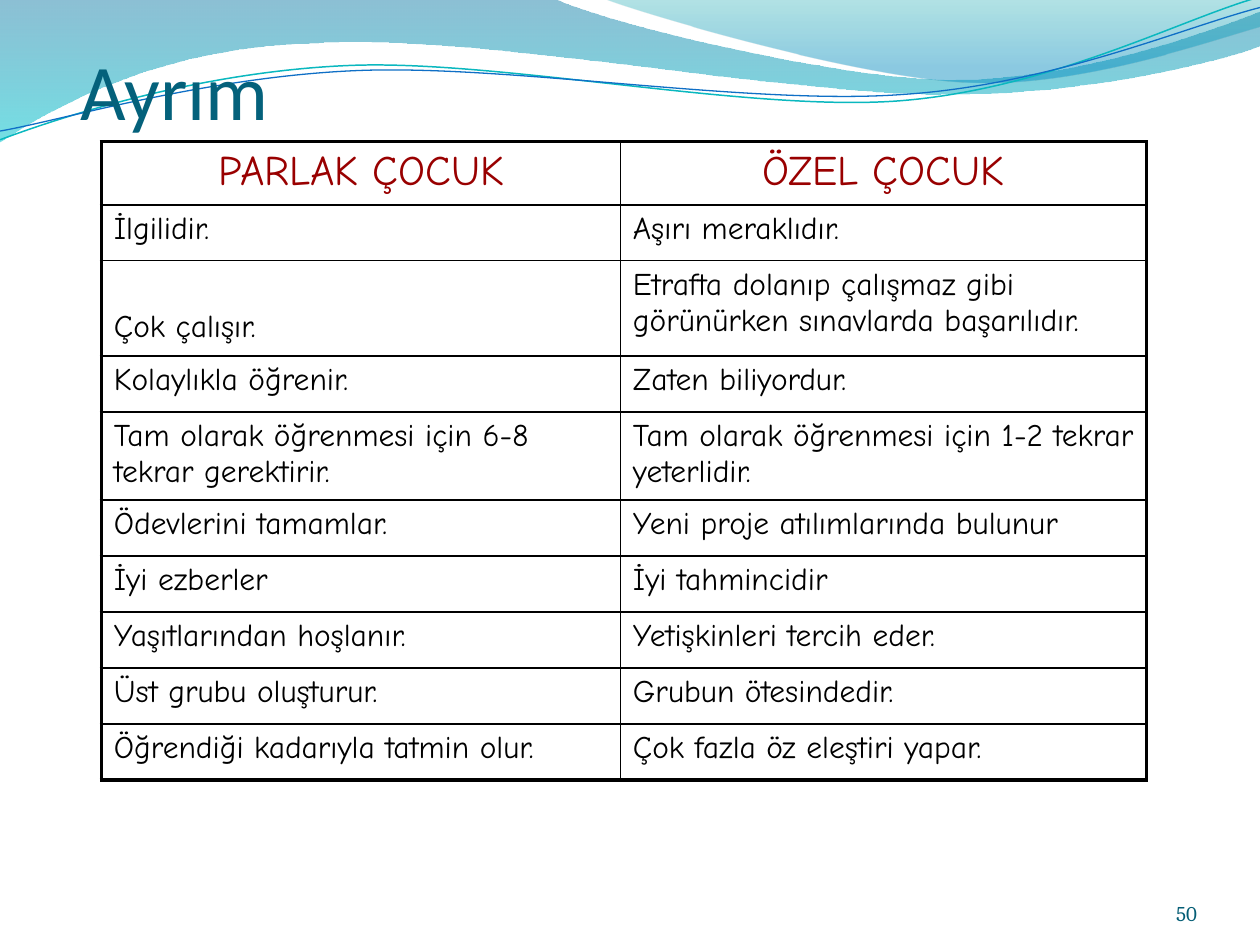
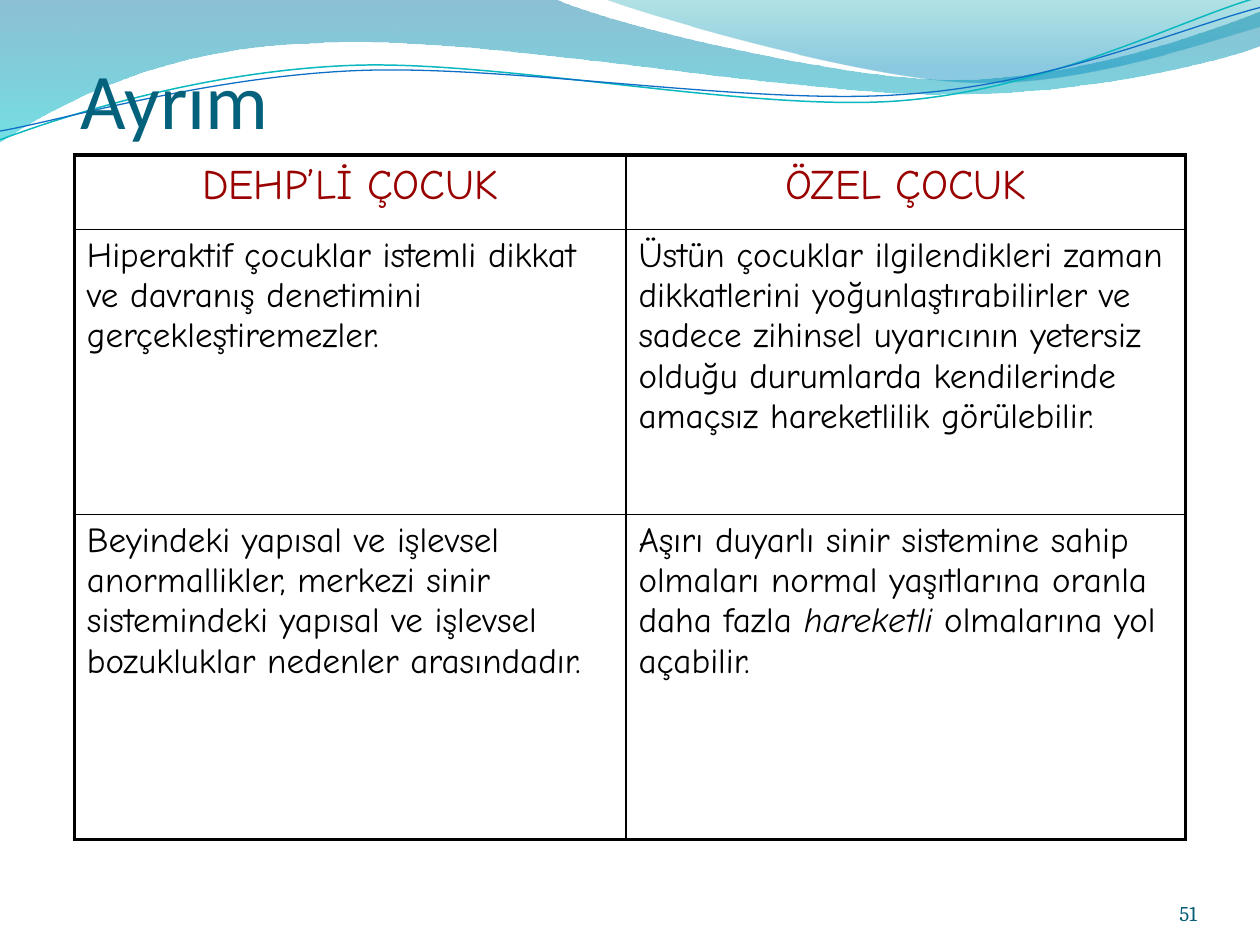
import pptx
import pptx.dml.color
import pptx.enum.text
import pptx.oxml.ns
import pptx.util
from lxml import etree

Pt = pptx.util.Pt
ALIGN = pptx.enum.text.PP_ALIGN
ANCHOR = pptx.enum.text.MSO_ANCHOR
qn = pptx.oxml.ns.qn

# Shared colours and sizes
TITLE_TEAL, NUMBER_TEAL = "04617B", "045D75"
HEADER_RED, BLACK = "990000", "000000"
THICK, THIN = 2.25, 1
WAVE_TILT = -2.7

# Top waves: a start point, then corners (x, y) or curves (two controls, end)
waves = [
    dict(start=(0, 0),
         segments=[(316.8, -0.7), (342.7, 12.2, 478.1, 45.4, 545.8, 45.4),
                   (614.2, 45.4, 689.8, 18.7, 720, 6.5), (720.7, 25.9),
                   (707.8, 31.7, 626.4, 54.7, 537.1, 54),
                   (447.8, 54, 275, 20.2, 185, 24.5),
                   (92.9, 25.9, 33.1, 59.8, -0.7, 81.4)],
         stops=[(0, "0074A1", 45), (1, "00C6CF", 55)]),
    dict(start=(344.9, -0.7),
         segments=[(366.5, 7.9, 491, 44.6, 553.7, 46.8),
                   (616.3, 49.7, 691.9, 23, 720, 15.1), (720, 0)],
         stops=[(0, "00A1A9", 30), (0.8, "008BBF", 45)]),
    dict(start=(-1.4, 62.9),
         segments=[(33.7, 51.6, 114, 29.4, 199.8, 29.9),
                   (284.8, 30.3, 425.8, 67.2, 512.4, 64.9),
                   (599, 62.4, 676.4, 25.7, 720.2, 15.6)],
         line=("0AB8BF", 0.85)),
    dict(start=(-1.2, 57.9),
         segments=[(33, 53.7, 118.3, 32.5, 204, 33),
                   (290.5, 33.4, 428.9, 63.8, 515.5, 61.3),
                   (601.4, 59.7, 678.5, 30.1, 721.4, 21.3)],
         line=("0F6FC6", 0.75)),
]

# Slide contents; a cell is a string or a list of (text, italic) runs
comparisons = [
    dict(number="50", title_top=16.6, left=57.9, top=81, body_size=18,
         widths=[296.6, 300.6],
         heights=[36, 32, 54.4, 32, 50.4] + [32] * 5,
         bottom_cells=[(2, 0)],
         rows=[("PARLAK ÇOCUK", "ÖZEL ÇOCUK"),
               ("İlgilidir.", "Aşırı meraklıdır."),
               ("Çok çalışır.",
                "Etrafta dolanıp çalışmaz gibi görünürken sınavlarda başarılıdır."),
               ("Kolaylıkla öğrenir.", "Zaten biliyordur."),
               ("Tam olarak öğrenmesi için 6-8 tekrar gerektirir.",
                "Tam olarak öğrenmesi için 1-2 tekrar yeterlidir."),
               ("Ödevlerini tamamlar.", "Yeni proje atılımlarında bulunur"),
               ("İyi ezberler", "İyi tahmincidir"),
               ("Yaşıtlarından hoşlanır.", "Yetişkinleri tercih eder."),
               ("Üst grubu oluşturur.", "Grubun ötesindedir."),
               ("Öğrendiği kadarıyla tatmin olur.", "Çok fazla öz eleştiri yapar.")]),
    dict(number="51", title_top=21.6, left=42.5, top=88.6, body_size=20,
         widths=[315.2, 319.9],
         heights=[42.5, 162.9, 185.6],
         bottom_cells=[],
         rows=[("DEHP’Lİ ÇOCUK", "ÖZEL ÇOCUK"),
               ("Hiperaktif çocuklar istemli dikkat ve davranış denetimini "
                "gerçekleştiremezler.",
                "Üstün çocuklar ilgilendikleri zaman dikkatlerini "
                "yoğunlaştırabilirler ve sadece zihinsel uyarıcının yetersiz "
                "olduğu durumlarda kendilerinde amaçsız hareketlilik görülebilir."),
               ("Beyindeki yapısal ve işlevsel anormallikler, merkezi sinir "
                "sistemindeki yapısal ve işlevsel bozukluklar nedenler arasındadır.",
                [("Aşırı duyarlı sinir sistemine sahip olmaları normal "
                  "yaşıtlarına oranla daha fazla ", False),
                 ("hareketli", True),
                 (" olmalarına yol açabilir.", False)])]),
]


def rgb(hex_color):
    return pptx.dml.color.RGBColor.from_string(hex_color)


def add_run(paragraph, text, font, size, color, italic=False):
    run = paragraph.add_run()
    run.text = text
    run.font.name = font
    run.font.size = Pt(size)
    run.font.color.rgb = rgb(color)
    if italic:
        run.font.italic = True


prs = pptx.Presentation()
prs.slide_width, prs.slide_height = Pt(720), Pt(540)
title_only = prs.slide_layouts[5]
slides = [prs.slides.add_slide(title_only) for _ in comparisons]

# Waves, drawn once and moved to the shared layout
for wave_id, wave in enumerate(waves, start=101):
    start_x, start_y = wave["start"]
    outline = slides[0].shapes.build_freeform(Pt(start_x), Pt(start_y), scale=1.0)
    outline.add_line_segments([(Pt(s[-2]), Pt(s[-1])) for s in wave["segments"]],
                              close="stops" in wave)
    band = outline.convert_to_shape()
    band.shadow.inherit = False

    # Bend the straight segments that have control points
    straight_lines = list(band.element.iter(qn("a:lnTo")))
    for straight, segment in zip(straight_lines, wave["segments"]):
        if len(segment) == 6:
            curve = etree.Element(qn("a:cubicBezTo"))
            for x, y in zip(segment[::2], segment[1::2]):
                etree.SubElement(curve, qn("a:pt"),
                                 x=str(Pt(x) - band.left), y=str(Pt(y) - band.top))
            straight.getparent().replace(straight, curve)

    if "stops" in wave:
        band.fill.gradient()
        band.fill.gradient_angle = 270
        for stop, (position, color, _) in zip(band.fill.gradient_stops, wave["stops"]):
            stop.position = position
            stop.color.rgb = rgb(color)
        tints = band.element.spPr.iter(qn("a:srgbClr"))
        for tint, (_, _, opacity) in zip(tints, wave["stops"]):
            etree.SubElement(tint, qn("a:alpha"), val=str(opacity * 1000))
        band.line.fill.background()
    else:
        color, width = wave["line"]
        band.rotation = WAVE_TILT
        band.fill.background()
        band.line.color.rgb = rgb(color)
        band.line.width = Pt(width)
    next(band.element.iter(qn("p:cNvPr"))).set("id", str(wave_id))
    title_only.shapes.element.append(band.element)

for slide, comparison in zip(slides, comparisons):
    # Title
    title = slide.shapes.title
    title.left, title.top = Pt(25.2), Pt(comparison["title_top"])
    title.width, title.height = Pt(669), Pt(61.2)
    frame = title.text_frame
    frame.auto_size = pptx.enum.text.MSO_AUTO_SIZE.NONE
    frame.vertical_anchor = ANCHOR.BOTTOM
    frame.margin_left, frame.margin_top = Pt(20.8), Pt(3.6)
    frame.margin_right = frame.margin_bottom = 0
    frame.paragraphs[0].alignment = ALIGN.LEFT
    add_run(frame.paragraphs[0], "Ayrım", "Calibri", 45, TITLE_TEAL)

    # Comparison table
    rows, widths, heights = (comparison[key] for key in ("rows", "widths", "heights"))
    table = slide.shapes.add_table(
        len(rows), len(widths), Pt(comparison["left"]), Pt(comparison["top"]),
        Pt(sum(widths)), Pt(sum(heights))).table
    table.first_row = table.horz_banding = False
    for column, width in zip(table.columns, widths):
        column.width = Pt(width)
    for row, height in zip(table.rows, heights):
        row.height = Pt(height)

    for r, row in enumerate(rows):
        for c, content in enumerate(row):
            cell = table.cell(r, c)
            cell.fill.background()
            if (r, c) in comparison["bottom_cells"]:
                cell.vertical_anchor = ANCHOR.BOTTOM
                cell.margin_bottom = Pt(5.8)
            paragraph = cell.text_frame.paragraphs[0]
            paragraph.alignment = ALIGN.CENTER if r == 0 else ALIGN.LEFT
            size, color = (24, HEADER_RED) if r == 0 else (comparison["body_size"], BLACK)
            runs = [(content, False)] if isinstance(content, str) else content
            for text, italic in runs:
                add_run(paragraph, text, "Comic Neue", size, color, italic)

            # Thick outer frame, thin inner rules
            outer_sides = {"L": c == 0, "R": c == len(widths) - 1,
                           "T": r == 0, "B": r == len(rows) - 1}
            properties = cell._tc.get_or_add_tcPr()
            for index, (side, is_outer) in enumerate(outer_sides.items()):
                border = etree.Element(qn("a:ln" + side),
                                       w=str(Pt(THICK if is_outer else THIN)))
                solid = etree.SubElement(border, qn("a:solidFill"))
                etree.SubElement(solid, qn("a:srgbClr"), val=BLACK)
                properties.insert(index, border)

    # Page number
    page_number = slide.shapes.add_textbox(Pt(624.2), Pt(500.4), Pt(59.8), Pt(28.8))
    frame = page_number.text_frame
    frame.word_wrap = True
    frame.vertical_anchor = ANCHOR.BOTTOM
    frame.margin_left = frame.margin_right = frame.margin_top = frame.margin_bottom = 0
    frame.paragraphs[0].alignment = ALIGN.RIGHT
    add_run(frame.paragraphs[0], comparison["number"], "Cambria", 12, NUMBER_TEAL)

prs.save("out.pptx")
